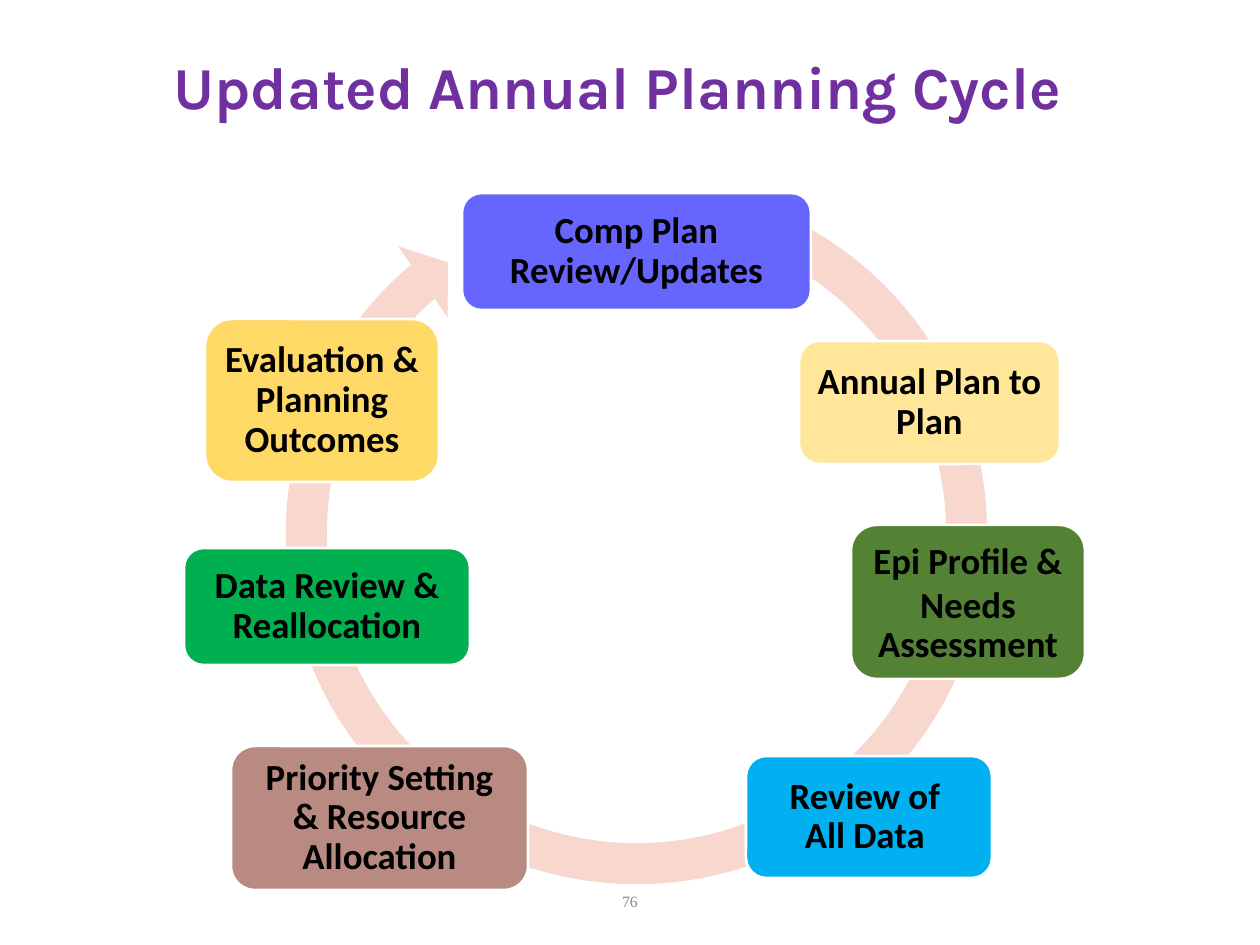
from pptx import Presentation
from pptx.dml.color import RGBColor
from pptx.enum.shapes import MSO_SHAPE
from pptx.enum.text import MSO_ANCHOR, MSO_AUTO_SIZE, PP_ALIGN
from pptx.util import Emu, Inches, Pt

PIXELS_PER_INCH = 126
PURPLE = RGBColor(0x70, 0x30, 0xA0)
PEACH = RGBColor(0xF8, 0xD7, 0xCE)
BLACK = RGBColor(0x00, 0x00, 0x00)
WHITE = RGBColor(0xFF, 0xFF, 0xFF)
GREY = RGBColor(0x89, 0x89, 0x89)
VIOLET = RGBColor(0x66, 0x66, 0xFF)
CREAM = RGBColor(0xFF, 0xE6, 0x99)
DARK_GREEN = RGBColor(0x54, 0x82, 0x35)
SKY_BLUE = RGBColor(0x00, 0xB0, 0xF0)
ROSE_BROWN = RGBColor(0xB9, 0x8A, 0x82)
GREEN = RGBColor(0x00, 0xB0, 0x50)
GOLD = RGBColor(0xFF, 0xD9, 0x66)


def px(*lengths):
    """Convert pixel lengths to EMU."""
    return [Emu(round(length * Inches(1) / PIXELS_PER_INCH)) for length in lengths]


def write_text(shape, text, font="Calibri", size=21, color=BLACK, bold=True,
               spacings=(0.9,), inset=11):
    """Fill the shape with centred text; spacings holds one line spacing per paragraph."""
    frame = shape.text_frame
    frame.text = text
    frame.word_wrap = True
    frame.auto_size = MSO_AUTO_SIZE.NONE
    frame.vertical_anchor = MSO_ANCHOR.MIDDLE
    margin, = px(inset)
    frame.margin_left = frame.margin_right = margin
    frame.margin_top = frame.margin_bottom = margin
    for paragraph, spacing in zip(frame.paragraphs, spacings):
        paragraph.alignment = PP_ALIGN.CENTER
        paragraph.line_spacing = spacing
        for run in paragraph.runs:
            run.font.name = font
            run.font.size = Pt(size)
            run.font.bold = bold
            run.font.color.rgb = color


presentation = Presentation()
presentation.slide_width, presentation.slide_height = px(1260, 945)
slide = presentation.slides.add_slide(presentation.slide_layouts[5])

title = slide.shapes.title
title.left, title.top, title.width, title.height = px(121, 32, 1008, 116)
write_text(title, "Updated Annual Planning Cycle ", font="Karla", size=34, color=PURPLE)

cycle_arrow = slide.shapes.add_shape(MSO_SHAPE.CIRCULAR_ARROW, *px(263, 160, 747, 747))
cycle_arrow.shadow.inherit = False
cycle_arrow.fill.solid()
cycle_arrow.fill.fore_color.rgb = PEACH
cycle_arrow.line.fill.background()
for index, value in enumerate((0.055, 3.307, 137.807, 173.83, 0.058)):
    cycle_arrow.adjustments[index] = value

# Clockwise from the top: text, place, fill, line spacing of each paragraph
steps = [
    ("Comp Plan Review/Updates", (462, 193, 349, 117), VIOLET, (0.9,)),
    ("Annual Plan to Plan", (799, 341, 261, 123), CREAM, (0.9,)),
    ("Epi Profile & Needs\nAssessment", (851, 525, 234, 154), DARK_GREEN, (1.0, 0.9)),
    ("Review of \nAll Data ", (746, 756, 246, 122), SKY_BLUE, (0.9, 0.9)),
    ("Priority Setting & Resource Allocation", (231, 746, 297, 144), ROSE_BROWN, (0.9,)),
    ("Data Review & Reallocation", (184, 548, 286, 117), GREEN, (0.9,)),
    ("Evaluation & Planning Outcomes", (205, 319, 234, 163), GOLD, (0.9,)),
]
for text, place, fill, spacings in steps:
    step = slide.shapes.add_shape(MSO_SHAPE.ROUNDED_RECTANGLE, *px(*place))
    step.shadow.inherit = False
    step.fill.solid()
    step.fill.fore_color.rgb = fill
    step.line.color.rgb = WHITE
    step.line.width = Pt(1.5)
    write_text(step, text, spacings=spacings)

page_number = slide.shapes.add_textbox(*px(417, 876, 426, 50))
write_text(page_number, "76", font="Times New Roman", size=9, color=GREY, bold=False,
           spacings=(1.0,))

presentation.save("out.pptx")
